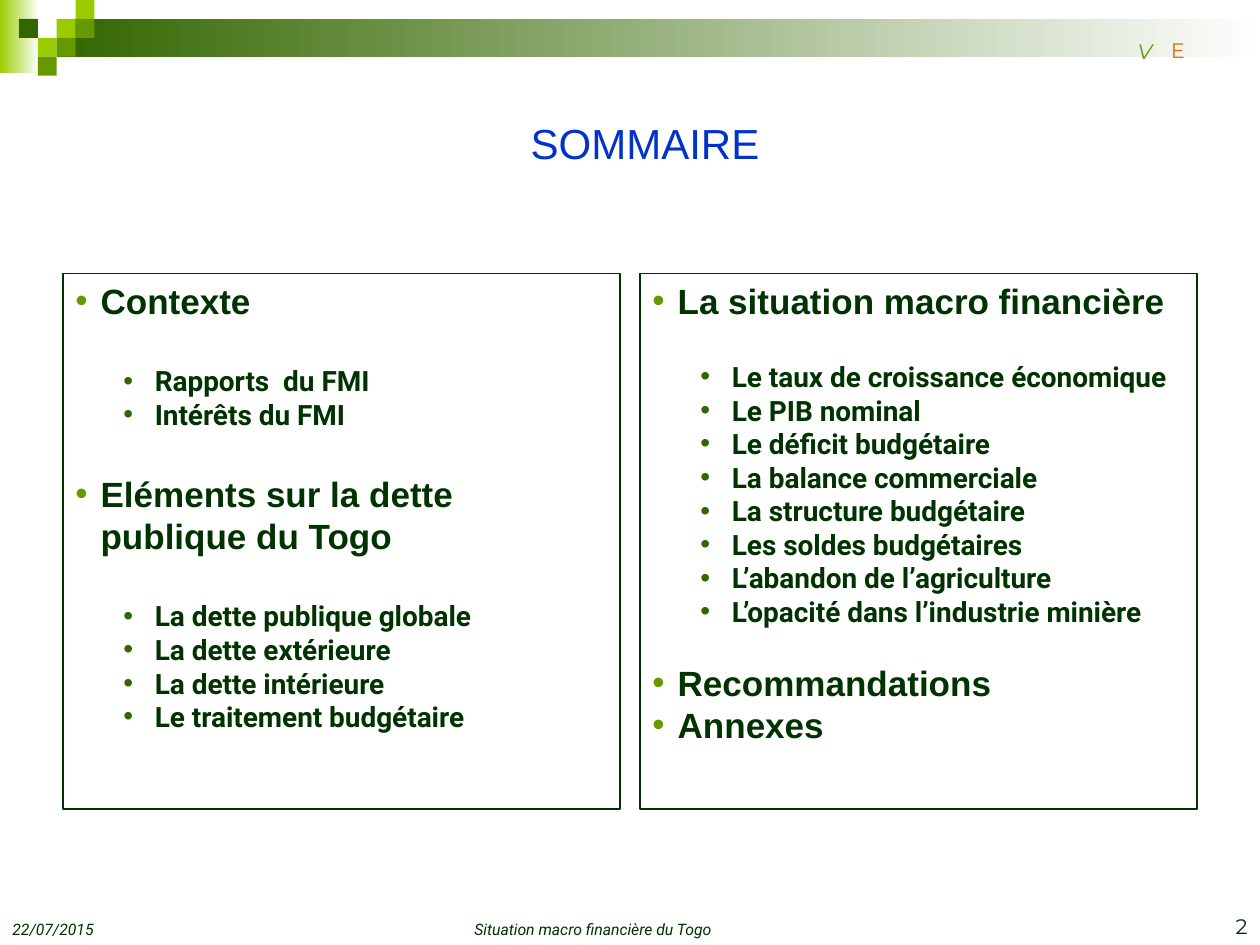
from lxml import etree
from pptx import Presentation
from pptx.dml.color import RGBColor
from pptx.enum.shapes import MSO_SHAPE as Kind
from pptx.enum.text import MSO_ANCHOR as Anchor, PP_ALIGN as Align
from pptx.oxml.ns import qn
from pptx.util import Inches, Pt

LIME = RGBColor(0x99, 0xCC, 0x00)
GREEN = RGBColor(0x66, 0x99, 0x00)
MOSS = RGBColor(0x33, 0x66, 0x00)
DARK = RGBColor(0x00, 0x33, 0x00)
BLUE = RGBColor(0x00, 0x33, 0xCC)
RUST = RGBColor(0xE3, 0x6C, 0x0A)
WHITE = RGBColor(0xFF, 0xFF, 0xFF)

CELL = 0.15
# Column, row, colour
CELLS = [(3, 1, LIME), (4, 0, LIME), (4, 1, GREEN), (2, 2, LIME),
         (1, 1, MOSS), (3, 2, GREEN), (2, 3, GREEN)]

# Level: font, size, left margin, indent, bullet colour
STYLES = {1: ("Arial", 20, 0.2, -0.2, GREEN),
          2: ("Roboto", 16, 0.63, -0.25, MOSS)}

# Level, space before in points, texts
LEFT = [
    (1, 0, ["Contexte"]),
    (2, 24, ["Rapports  du FMI", "Intérêts du FMI"]),
    (1, 24, ["Eléments sur la dette publique du Togo"]),
    (2, 24, ["La dette publique globale", "La dette extérieure",
             "La dette intérieure", "Le traitement budgétaire"]),
]
RIGHT = [
    (1, 0, ["La situation macro financière"]),
    (2, 21.6, ["Le taux de croissance économique", "Le PIB nominal",
               "Le déficit budgétaire", "La balance commerciale",
               "La structure budgétaire", "Les soldes budgétaires",
               "L’abandon de l’agriculture",
               "L’opacité dans l’industrie minière"]),
    (1, 19.2, ["Recommandations", "Annexes"]),
]


def add_rect(slide, x, y, w, h):
    rect = slide.shapes.add_shape(
        Kind.RECTANGLE, Inches(x), Inches(y), Inches(w), Inches(h))
    rect.shadow.inherit = False
    rect.line.fill.background()
    return rect


def add_fade(slide, x, y, w, h, color):
    fill = add_rect(slide, x, y, w, h).fill
    fill.gradient()
    fill.gradient_angle = 0
    for stop, tone, pos in zip(fill.gradient_stops, (color, WHITE), (0, 1)):
        stop.color.rgb = tone
        stop.position = pos


def add_cell(slide, col, row, color):
    cell = add_rect(slide, col * CELL, row * CELL, CELL, CELL)
    cell.fill.solid()
    cell.fill.fore_color.rgb = color


def add_run(para, text, font, size, color, bold=False, italic=False):
    run = para.add_run()
    run.text = text
    run.font.name = font
    run.font.size = Pt(size)
    run.font.color.rgb = color
    run.font.bold = bold
    run.font.italic = italic


def add_label(slide, box, text, font, size, color, align=Align.CENTER,
              anchor=Anchor.BOTTOM, italic=False, wrap=True):
    frame = slide.shapes.add_textbox(*map(Inches, box)).text_frame
    frame.word_wrap = wrap
    frame.vertical_anchor = anchor
    para = frame.paragraphs[0]
    para.alignment = align
    add_run(para, text, font, size, color, italic=italic)


def set_bullet(para, left, indent, color):
    props = para._p.get_or_add_pPr()
    props.set("marL", str(Inches(left)))
    props.set("indent", str(Inches(indent)))
    tint = etree.SubElement(props, qn("a:buClr"))
    etree.SubElement(tint, qn("a:srgbClr"), val=str(color))
    etree.SubElement(props, qn("a:buFont"), typeface="Arial")
    etree.SubElement(props, qn("a:buChar"), char="•")


def add_panel(slide, x, groups):
    panel = add_rect(slide, x, 2.17, 4.42, 4.25)
    panel.fill.background()
    panel.line.color.rgb = DARK
    panel.line.width = Pt(0.75)
    frame = panel.text_frame
    frame.word_wrap = True
    frame.vertical_anchor = Anchor.TOP
    para = frame.paragraphs[0]
    for level, gap, texts in groups:
        font, size, left, indent, color = STYLES[level]
        for i, text in enumerate(texts):
            if para.runs:
                para = frame.add_paragraph()
            para.alignment = Align.LEFT
            para.line_spacing = Pt(size * 1.2)
            para.space_before = Pt(0 if i else gap)
            set_bullet(para, left, indent, color)
            add_run(para, text, font, size, DARK, bold=True)


def main():
    deck = Presentation()
    deck.slide_width, deck.slide_height = Inches(10), Inches(7.5)
    slide = deck.slides.add_slide(deck.slide_layouts[6])

    # Header band and checkered corner
    add_fade(slide, 0, 0, 0.31, 0.58, LIME)
    add_fade(slide, 0.45, 0.15, 9.55, 0.3, MOSS)
    for cell in CELLS:
        add_cell(slide, *cell)

    # Title and the two panels
    add_label(slide, (0.62, 0.7, 9, 0.86), "SOMMAIRE", "Arial", 24, BLUE,
              anchor=Anchor.MIDDLE)
    add_panel(slide, 0.5, LEFT)
    add_panel(slide, 5.08, RIGHT)

    # Footer
    add_label(slide, (3.12, 7, 3.17, 0.5), "Situation macro financière du Togo",
              "Roboto", 9, DARK, italic=True)
    add_label(slide, (7.67, 7, 2.33, 0.5), "2", "Montserrat", 12, DARK,
              Align.RIGHT)
    add_label(slide, (0, 6.98, 2.33, 0.52), "22/07/2015", "Roboto", 9, DARK,
              Align.LEFT, italic=True)

    # Letters in the band
    add_label(slide, (8.93, 0.26, 0.27, 0.16), "V", "Montserrat", 12, GREEN,
              anchor=Anchor.TOP, italic=True, wrap=False)
    add_label(slide, (9.2, 0.25, 0.19, 0.16), "E", "Montserrat", 12, RUST,
              anchor=Anchor.TOP, wrap=False)

    deck.save("out.pptx")


if __name__ == "__main__":
    main()
